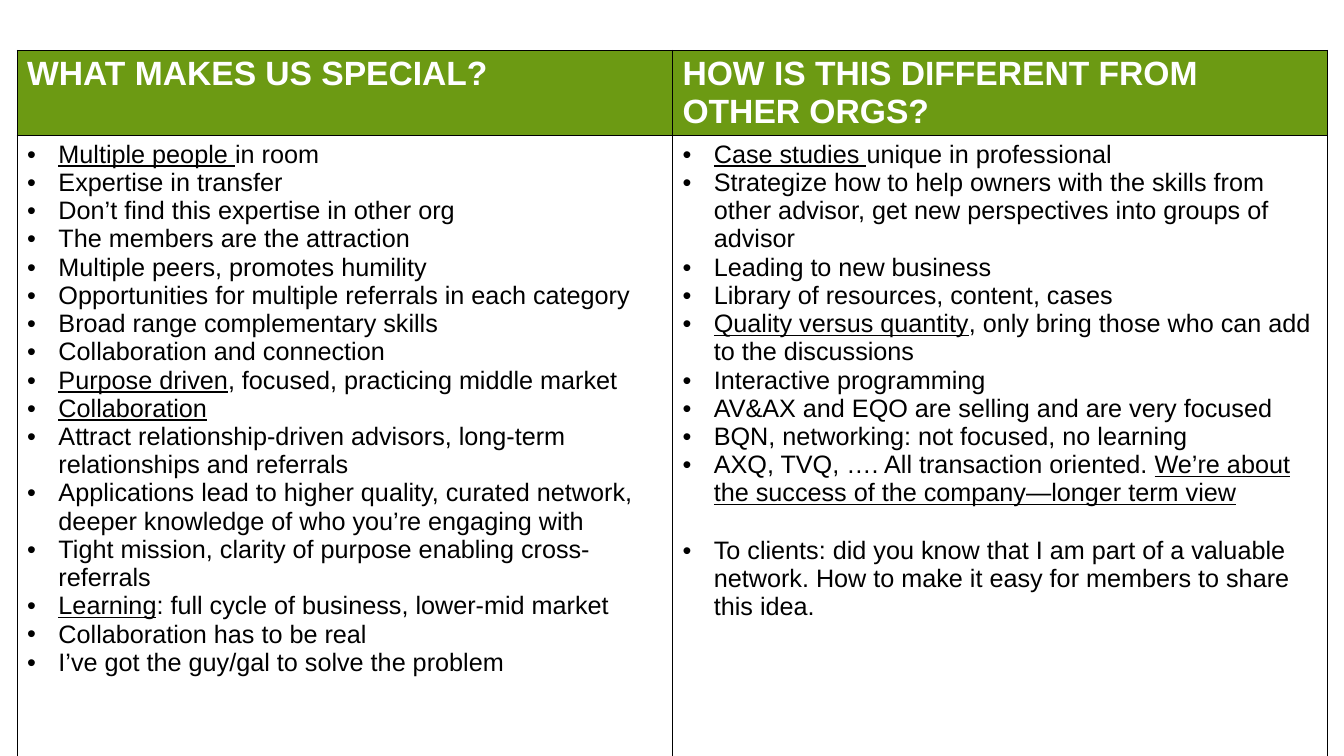
from lxml import etree
from pptx import Presentation
from pptx.dml.color import RGBColor
from pptx.oxml.ns import qn
from pptx.util import Inches, Pt

GREEN = RGBColor(0x6C, 0x9A, 0x13)
WHITE = RGBColor(0xFF, 0xFF, 0xFF)
BLACK = RGBColor(0x00, 0x00, 0x00)

# Each point is a list of (text, underlined) spans.
COLUMNS = [
    ("WHAT MAKES US SPECIAL?", [
        [("Multiple people ", True), ("in room", False)],
        [("Expertise in transfer", False)],
        [("Don’t find this expertise in other org", False)],
        [("The members are the attraction", False)],
        [("Multiple peers, promotes humility", False)],
        [("Opportunities for multiple referrals in each category", False)],
        [("Broad range complementary skills", False)],
        [("Collaboration and connection", False)],
        [("Purpose driven", True), (", focused, practicing middle market", False)],
        [("Collaboration", True)],
        [("Attract relationship-driven advisors, long-term relationships and referrals", False)],
        [("Applications lead to higher quality, curated network, "
          "deeper knowledge of who you’re engaging with", False)],
        [("Tight mission, clarity of purpose enabling cross-referrals", False)],
        [("Learning", True), (": full cycle of business, lower-mid market", False)],
        [("Collaboration has to be real", False)],
        [("I’ve got the guy/gal to solve the problem", False)],
    ]),
    ("HOW IS THIS DIFFERENT FROM OTHER ORGS?", [
        [("Case studies ", True), ("unique in professional", False)],
        [("Strategize how to help owners with the skills from other advisor, "
          "get new perspectives into groups of advisor", False)],
        [("Leading to new business", False)],
        [("Library of resources, content, cases", False)],
        [("Quality versus quantity", True),
         (", only bring those who can add to the discussions", False)],
        [("Interactive programming", False)],
        [("AV&AX and EQO are selling and are very focused", False)],
        [("BQN, networking: not focused, no learning", False)],
        [("AXQ, TVQ, …. All transaction oriented. ", False),
         ("We’re about the success of the company—longer term view", True)],
        [("To clients: did you know that I am part of a valuable network. "
          "How to make it easy for members to share this idea.", False)],
    ]),
]
CLOSING_POINT = COLUMNS[1][1][-1]
LEFT, TOP, COLUMN_WIDTH = 0.17, 0.5, 6.5
HEADER_HEIGHT = 0.84
PAGE_WIDTH, PAGE_HEIGHT = 13.33, 7.5
BODY_HEIGHT = PAGE_HEIGHT - TOP - HEADER_HEIGHT


def add_borders(cell, sides):
    properties = cell._tc.get_or_add_tcPr()
    for side in sides:
        line = etree.SubElement(properties, qn(f"a:ln{side}"), w=str(Pt(1)))
        fill = etree.SubElement(line, qn("a:solidFill"))
        etree.SubElement(fill, qn("a:srgbClr"), val=str(BLACK))


def style_font(para, size, color, bold):
    font = para.font
    font.name, font.size, font.bold = "Arial", Pt(size), bold
    font.color.rgb = color


def fill_header(cell, text):
    add_borders(cell, "LRTB")
    cell.fill.solid()
    cell.fill.fore_color.rgb = GREEN
    cell.text = text
    style_font(cell.text_frame.paragraphs[0], 24, WHITE, True)


def fill_points(cell, points):
    add_borders(cell, "LRT")
    cell.fill.background()
    frame = cell.text_frame
    for index, spans in enumerate(points):
        para = frame.add_paragraph() if index else frame.paragraphs[0]
        properties = para._p.get_or_add_pPr()
        properties.set("marL", str(Inches(0.31)))
        properties.set("indent", str(Inches(-0.31)))
        if spans is CLOSING_POINT:
            para.space_before = Pt(21)
        etree.SubElement(properties, qn("a:buFont"), typeface="Arial")
        etree.SubElement(properties, qn("a:buChar"), char="•")
        style_font(para, 18, BLACK, False)
        for text, underlined in spans:
            span = para.add_run()
            span.text = text
            if underlined:
                span.font.underline = True


deck = Presentation()
deck.slide_width, deck.slide_height = Inches(PAGE_WIDTH), Inches(PAGE_HEIGHT)
page = deck.slides.add_slide(deck.slide_layouts[6])
table = page.shapes.add_table(
    2, len(COLUMNS), Inches(LEFT), Inches(TOP),
    Inches(COLUMN_WIDTH * len(COLUMNS)), Inches(HEADER_HEIGHT + BODY_HEIGHT)).table
table.horz_banding = False
table.rows[0].height = Inches(HEADER_HEIGHT)
table.rows[1].height = Inches(BODY_HEIGHT)
for number, (heading, points) in enumerate(COLUMNS):
    table.columns[number].width = Inches(COLUMN_WIDTH)
    fill_header(table.cell(0, number), heading)
    fill_points(table.cell(1, number), points)

deck.save("out.pptx")
